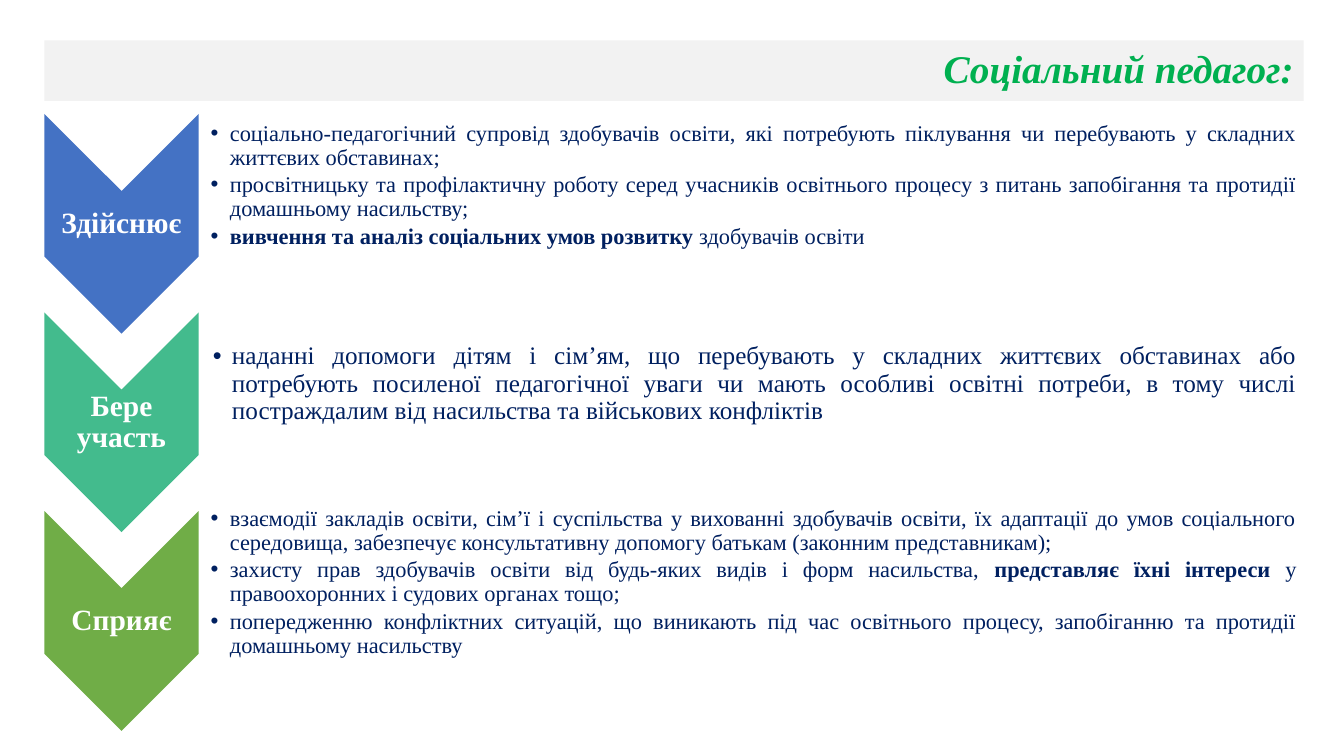
from lxml import etree
from pptx import Presentation
from pptx.dml.color import RGBColor
from pptx.enum import shapes, text
from pptx.oxml import ns
from pptx.util import Inches, Pt

FONT = "Times New Roman"
COLORS = {
    "band": "F2F2F2",
    "title": "00B050",
    "list": "002060",
    "label": "FFFFFF",
    "blue": "4472C4",
    "teal": "43BB8D",
    "green": "70AD47",
}
COMPARISON_LAYOUT = 4
LEFT, CHEVRON_WIDTH, CHEVRON_HEIGHT = 0.44, 1.53, 2.18
FIRST_TOP, ROW_STEP = 1.13, 1.97
LIST_WIDTH, LIST_HEIGHT = 10.9, 1.28

ROLES = [
    ("Здійснює", "blue", 1, 16, 0.12, [
        [("соціально-педагогічний супровід здобувачів освіти, які потребують "
          "піклування чи перебувають у складних життєвих обставинах;", False)],
        [("просвітницьку та профілактичну роботу серед учасників освітнього "
          "процесу з питань запобігання та протидії домашньому насильству;", False)],
        [("вивчення та аналіз соціальних умов розвитку ", True),
         ("здобувачів освіти", False)],
    ]),
    ("Бере участь", "teal", 2, 18, 0.14, [
        [("наданні допомоги дітям і сім’ям, що перебувають у складних життєвих "
          "обставинах або потребують посиленої педагогічної уваги чи мають "
          "особливі освітні потреби, в тому числі постраждалим від насильства "
          "та військових конфліктів", False)],
    ]),
    ("Сприяє", "green", 4, 16, 0.12, [
        [("взаємодії закладів освіти, сім’ї і суспільства у вихованні здобувачів "
          "освіти, їх адаптації до умов соціального середовища, забезпечує "
          "консультативну допомогу батькам (законним представникам);", False)],
        [("захисту прав здобувачів освіти від будь-яких видів і форм насильства, ", False),
         ("представляє їхні інтереси ", True),
         ("у правоохоронних і судових органах тощо;", False)],
        [("попередженню конфліктних ситуацій, що виникають під час освітнього "
          "процесу, запобіганню та протидії домашньому насильству", False)],
    ]),
]


def color(name):
    return RGBColor.from_string(COLORS[name])


def place(shape, left, top, width, height):
    shape.left, shape.top = Inches(left), Inches(top)
    shape.width, shape.height = Inches(width), Inches(height)


def set_frame(frame, left_inset, inset):
    frame.word_wrap = True
    frame.auto_size = text.MSO_AUTO_SIZE.NONE
    frame.vertical_anchor = text.MSO_ANCHOR.MIDDLE
    frame.margin_left = Inches(left_inset)
    frame.margin_right = Inches(left_inset if inset is None else inset)
    frame.margin_top = frame.margin_bottom = Inches(0.01)


def set_paragraph(paragraph, alignment, size, color_name):
    paragraph.alignment = alignment
    paragraph.line_spacing = 0.9
    paragraph.space_before = Pt(0)
    paragraph.font.name = FONT
    paragraph.font.size = Pt(size)
    paragraph.font.color.rgb = color(color_name)


def add_bullet(paragraph):
    properties = paragraph._p.get_or_add_pPr()
    properties.set("marL", str(Inches(0.19)))
    properties.set("indent", str(-Inches(0.19)))
    etree.SubElement(properties, ns.qn("a:buFont"), typeface="Arial")
    etree.SubElement(properties, ns.qn("a:buChar"), char="•")


def fill_title(title, left, top, width, height):
    place(title, left, top, width, height)
    title.fill.solid()
    title.fill.fore_color.rgb = color("band")
    set_frame(title.text_frame, 0.1, None)
    paragraph = title.text_frame.paragraphs[0]
    paragraph.text = "Соціальний педагог:"
    set_paragraph(paragraph, text.PP_ALIGN.RIGHT, 28, "title")
    paragraph.font.bold = paragraph.font.italic = True


def add_chevron(slide, label, color_name, left, top, width, height):
    offset = (height - width) / 2
    chevron = slide.shapes.add_shape(
        shapes.MSO_SHAPE.CHEVRON, Inches(left - offset), Inches(top + offset),
        Inches(height), Inches(width))
    chevron.rotation = 90
    chevron.shadow.inherit = False
    chevron.fill.solid()
    chevron.fill.fore_color.rgb = color(color_name)
    chevron.line.fill.background()

    label_height = height - 1.53
    label_box = slide.shapes.add_textbox(
        Inches(left), Inches(top + (height - label_height) / 2),
        Inches(width), Inches(label_height))
    set_frame(label_box.text_frame, 0.01, None)
    paragraph = label_box.text_frame.paragraphs[0]
    paragraph.text = label
    set_paragraph(paragraph, text.PP_ALIGN.CENTER, 21, "label")
    paragraph.font.bold = True


def fill_list(body, items, size, inset, left, top, width, height):
    place(body, left, top, width, height)
    frame = body.text_frame
    set_frame(frame, inset, 0.01)
    for index, item in enumerate(items):
        paragraph = frame.add_paragraph() if index else frame.paragraphs[0]
        set_paragraph(paragraph, text.PP_ALIGN.JUSTIFY, size, "list")
        paragraph.space_after = Pt(size * 0.15)
        add_bullet(paragraph)
        for words, bold in item:
            run = paragraph.add_run()
            run.text = words
            run.font.bold = bold


def build_slide(presentation):
    slide = presentation.slides.add_slide(
        presentation.slide_layouts[COMPARISON_LAYOUT])
    bodies = {shape.placeholder_format.idx: shape for shape in slide.placeholders}
    fill_title(slide.shapes.title, LEFT, 0.4, 12.49, 0.6)
    for row, (label, color_name, body_index, size, inset, items) in enumerate(ROLES):
        top = FIRST_TOP + row * ROW_STEP
        add_chevron(slide, label, color_name, LEFT, top,
                    CHEVRON_WIDTH, CHEVRON_HEIGHT)
        fill_list(bodies[body_index], items, size, inset,
                  LEFT + CHEVRON_WIDTH, top + 0.07, LIST_WIDTH, LIST_HEIGHT)
    unused = bodies[3]._element
    unused.getparent().remove(unused)


def main():
    presentation = Presentation()
    presentation.slide_width = Inches(13.33)
    presentation.slide_height = Inches(7.5)
    build_slide(presentation)
    presentation.save("out.pptx")


if __name__ == "__main__":
    main()
